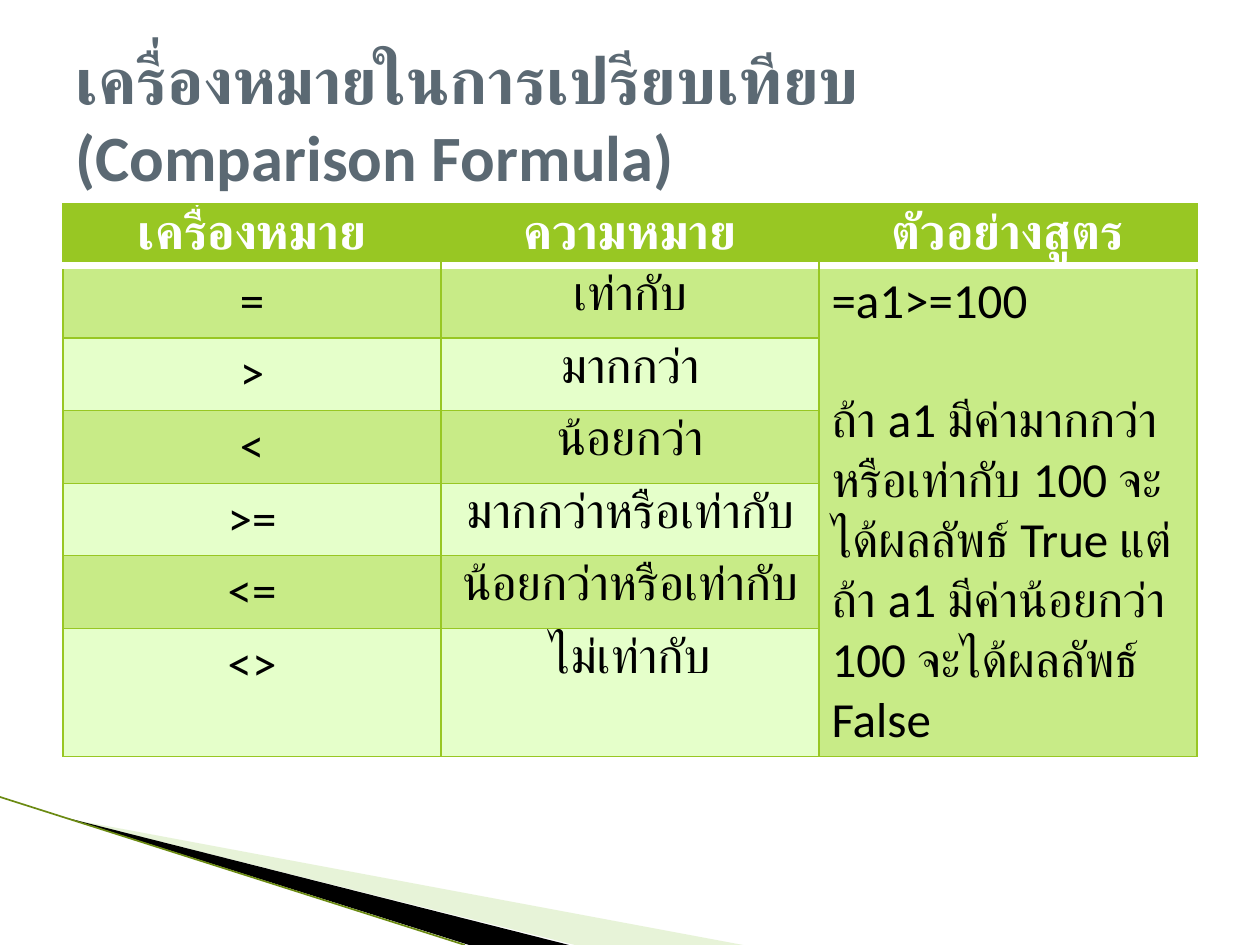
from dataclasses import dataclass
from typing import Optional

from lxml import etree
from pptx import Presentation
from pptx.dml.color import RGBColor
from pptx.enum.shapes import MSO_CONNECTOR
from pptx.enum.text import MSO_ANCHOR, PP_ALIGN
from pptx.oxml.ns import qn
from pptx.util import Pt

LEFT, CENTER = PP_ALIGN.LEFT, PP_ALIGN.CENTER
MIDDLE = MSO_ANCHOR.MIDDLE
STRAIGHT = MSO_CONNECTOR.STRAIGHT
SCALE = 914400 / 126


@dataclass(frozen=True)
class Theme:
    font: str = "Calibri"
    title: str = "5B6973"
    green: str = "98C723"
    band: str = "C8EB87"
    pale: str = "E5FFCA"
    leaf: str = "C5E19F"
    olive: str = "6B8A12"
    white: str = "FFFFFF"
    black: str = "000000"
    title_size: float = 36.9
    cell_size: float = 28
    gap: float = 34
    thin: float = 0.75
    thick: float = 4.33


@dataclass(frozen=True)
class Wedge:
    points: tuple
    color: str
    alpha: Optional[int] = None


THEME = Theme()
WEDGES = (
    Wedge(((69, 819), (743, 945), (575, 945)), THEME.leaf, 40),
    Wedge(((67, 818), (569, 945), (469, 945)), THEME.black),
)
TITLE = "เครื่องหมายในการเปรียบเทียบ (Comparison Formula)"
HEADS = ("เครื่องหมาย", "ความหมาย", "ตัวอย่างสูตร")
SIGNS = (
    ("=", "เท่ากับ"),
    (">", "มากกว่า"),
    ("<", "น้อยกว่า"),
    (">=", "มากกว่าหรือเท่ากับ"),
    ("<=", "น้อยกว่าหรือเท่ากับ"),
    ("<>", "ไม่เท่ากับ"),
)
SAMPLE = (
    "=a1>=100",
    "ถ้า a1 มีค่ามากกว่าหรือเท่ากับ 100 จะได้ผลลัพธ์ True "
    "แต่ถ้า a1 มีค่าน้อยกว่า 100 จะได้ผลลัพธ์ False",
)


def px(n: int) -> int:
    return round(n * SCALE)


def rgb(color: str) -> RGBColor:
    return RGBColor.from_string(color)


def write(frame, lines: tuple, size: float, color: str,
          bold: bool = False, align=LEFT) -> None:
    for i, line in enumerate(lines):
        para = frame.add_paragraph() if i else frame.paragraphs[0]
        para.alignment = align
        if i:
            para.space_before = Pt(THEME.gap)
        run = para.add_run()
        run.text = line
        font = run.font
        font.name, font.size, font.bold = THEME.font, Pt(size), bold
        font.color.rgb = rgb(color)


def draw_wedge(slide, wedge: Wedge) -> None:
    start, *rest = wedge.points
    path = slide.shapes.build_freeform(*start, scale=SCALE)
    path.add_line_segments(rest, close=True)
    shape = path.convert_to_shape()
    shape.shadow.inherit = False
    shape.line.fill.background()
    shape.fill.solid()
    shape.fill.fore_color.rgb = rgb(wedge.color)
    if wedge.alpha:
        tint = shape.fill._xPr.find(".//" + qn("a:srgbClr"))
        etree.SubElement(tint, qn("a:alpha"), val=str(wedge.alpha * 1000))


def draw_edge(slide) -> None:
    """Draw the thin slope along the lower left corner."""
    edge = slide.shapes.add_connector(
        STRAIGHT, 0, px(797), px(465), px(945))
    edge.line.color.rgb = rgb(THEME.olive)
    edge.line.width = Pt(0.95)
    etree.SubElement(edge._element.spPr, qn("a:effectLst"))


def border(cell, side: str, color: Optional[str], width: float) -> None:
    props = cell._tc.get_or_add_tcPr()
    line = etree.SubElement(props, qn("a:ln" + side), w=str(Pt(width)))
    if color is None:
        etree.SubElement(line, qn("a:noFill"))
        return
    fill = etree.SubElement(line, qn("a:solidFill"))
    etree.SubElement(fill, qn("a:srgbClr"), val=color)


def style(cell, row: int, col: int) -> None:
    """Set borders first, then the fill, as the schema orders them."""
    head = row == 0
    for side in "LRTB":
        color, width = THEME.green, THEME.thin
        if (head and side == "B") or (row == 1 and side == "T"):
            color, width = THEME.white, THEME.thick
        elif head and (side, col) not in (("L", 0), ("R", 2)) and side in "LR":
            color = None
        border(cell, side, color, width)
    cell.fill.solid()
    band = THEME.band if row % 2 or col == 2 else THEME.pale
    cell.fill.fore_color.rgb = rgb(THEME.green if head else band)


def draw_table(slide) -> None:
    count = len(SIGNS) + 1
    table = slide.shapes.add_table(
        count, len(HEADS), px(63), px(204), px(1134), px(500)).table
    for row in table.rows:
        row.height = px(52)
    table.cell(1, 2).merge(table.cell(count - 1, 2))
    for r in range(count):
        for c in range(len(HEADS)):
            style(table.cell(r, c), r, c)
    for c, text in enumerate(HEADS):
        write(table.cell(0, c).text_frame, (text,), THEME.cell_size,
              THEME.white, True, CENTER)
    for r, pair in enumerate(SIGNS, 1):
        for c, text in enumerate(pair):
            write(table.cell(r, c).text_frame, (text,), THEME.cell_size,
                  THEME.black, align=CENTER)
    write(table.cell(1, 2).text_frame, SAMPLE, THEME.cell_size, THEME.black)


def draw_title(slide) -> None:
    box = slide.shapes.add_textbox(px(63), px(38), px(1134), px(158))
    frame = box.text_frame
    frame.word_wrap = True
    frame.vertical_anchor = MIDDLE
    write(frame, (TITLE,), THEME.title_size, THEME.title, True)


def main() -> None:
    deck = Presentation()
    deck.slide_width, deck.slide_height = px(1260), px(945)
    slide = deck.slides.add_slide(deck.slide_layouts[6])
    for wedge in WEDGES:
        draw_wedge(slide, wedge)
    draw_edge(slide)
    draw_table(slide)
    draw_title(slide)
    deck.save("out.pptx")


if __name__ == "__main__":
    main()
